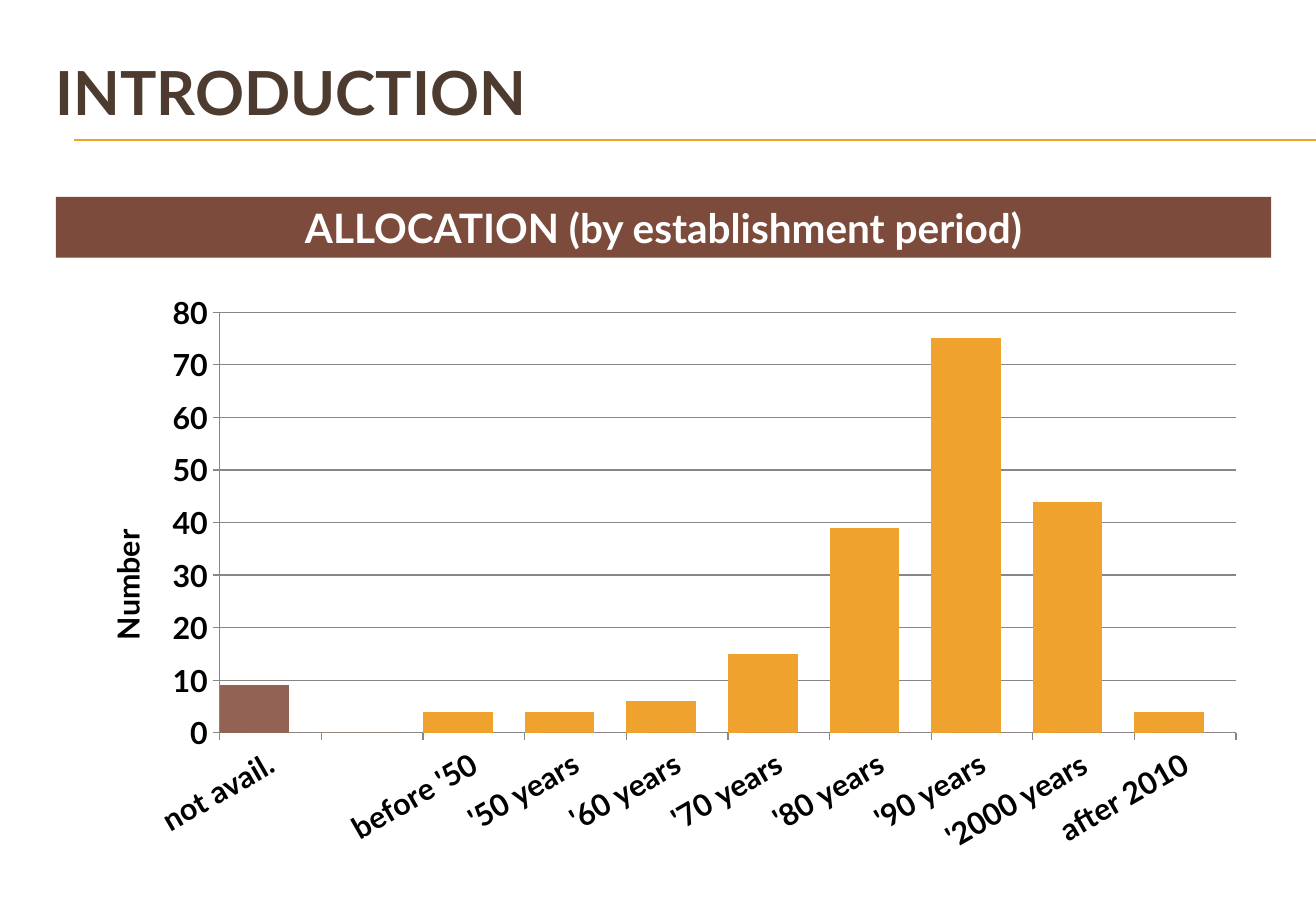
import dataclasses

import lxml.etree
import pptx
import pptx.chart.data
import pptx.dml.color
import pptx.enum.chart
import pptx.enum.shapes
import pptx.enum.text
import pptx.oxml
import pptx.oxml.ns
import pptx.util


@dataclasses.dataclass(frozen=True)
class Theme:
    """Colours, type sizes and line widths of the deck."""
    font: str = "Lato"
    heading: str = "4E3B30"
    accent: str = "F0A22E"
    banner: str = "7C4B3B"
    missing: str = "926255"
    series: tuple = ("F0A22E", "A5644E", "B58B80")
    axis: str = "878787"
    black: str = "000000"
    white: str = "FFFFFF"
    title_pt: int = 36
    banner_pt: int = 24
    chart_pt: int = 18
    line_pt: float = 0.75


THEME = Theme()
WIDTH, HEIGHT = pptx.util.Inches(10.83), pptx.util.Inches(7.5)
PERIODS = ("not avail.", "", "before '50", "'50 years", "'60 years",
           "'70 years", "'80 years", "'90 years", "'2000 years", "after 2010")
COUNTS = (9, 0, 4, 4, 6, 15, 39, 75, 44, 4)
ZEROS = (0, 0, None, 0, 0, 0, 0, 0, 0, 0)


def area(x, y, w, h):
    """Turn percentages of the slide into a box of lengths."""
    return tuple(round(share * side / 100) for share, side
                 in ((x, WIDTH), (y, HEIGHT), (w, WIDTH), (h, HEIGHT)))


def rgb(value):
    """Return a colour object for a hex value."""
    return pptx.dml.color.RGBColor.from_string(value)


def style_font(font, size, color, bold=True):
    """Apply the theme face with a size and colour."""
    font.name, font.size, font.bold = THEME.font, pptx.util.Pt(size), bold
    font.color.rgb = rgb(color)


def style_line(line, color):
    """Give a line its colour and the theme width."""
    line.color.rgb, line.width = rgb(color), pptx.util.Pt(THEME.line_pt)


def add_text(tf, text, size, color, align):
    """Write one bold run into a wrapped, vertically centred frame."""
    tf.word_wrap = True
    tf.vertical_anchor = pptx.enum.text.MSO_ANCHOR.MIDDLE
    p = tf.paragraphs[0]
    p.alignment = align
    r = p.add_run()
    r.text = text
    style_font(r.font, size, color)


def add_title(s, box, text):
    """Place the slide heading."""
    add_text(s.shapes.add_textbox(*box).text_frame, text, THEME.title_pt,
             THEME.heading, pptx.enum.text.PP_ALIGN.LEFT)


def add_rule(s, box):
    """Draw the pair of lines at the top and bottom of the box."""
    x, y, w, h = box
    for level in (y, y + h):
        line = s.shapes.add_connector(
            pptx.enum.shapes.MSO_CONNECTOR.STRAIGHT, x, level, x + w, level)
        style_line(line.line, THEME.accent)
        lxml.etree.SubElement(line._element.spPr,
                              pptx.oxml.ns.qn("a:effectLst"))


def add_banner(s, box, text):
    """Place the filled subtitle bar."""
    sp = s.shapes.add_shape(pptx.enum.shapes.MSO_SHAPE.RECTANGLE, *box)
    sp.shadow.inherit = False
    sp.fill.solid()
    sp.fill.fore_color.rgb = rgb(THEME.banner)
    sp.line.fill.background()
    add_text(sp.text_frame, text, THEME.banner_pt, THEME.white,
             pptx.enum.text.PP_ALIGN.CENTER)


def set_layout(parent, index, **shares):
    """Fix a chart part at shares of the chart area."""
    for old in parent.findall(pptx.oxml.ns.qn("c:layout")):
        parent.remove(old)
    layout = pptx.oxml.parse_xml(
        f"<c:layout {pptx.oxml.ns.nsdecls('c')}><c:manualLayout/></c:layout>")
    settings = {"xMode": "edge", "yMode": "edge", **shares}
    if "w" in shares:
        settings = {"layoutTarget": "inner", **settings}
    for name, value in settings.items():
        lxml.etree.SubElement(layout[0], pptx.oxml.ns.qn(f"c:{name}"),
                              val=str(value))
    parent.insert(index, layout)


def style_axis(axis):
    """Style the line, ticks and labels of an axis."""
    axis.major_tick_mark = pptx.enum.chart.XL_TICK_MARK.OUTSIDE
    axis.minor_tick_mark = pptx.enum.chart.XL_TICK_MARK.NONE
    style_line(axis.format.line, THEME.axis)
    style_font(axis.tick_labels.font, THEME.chart_pt, THEME.black)


def add_period_chart(s, box):
    """Place the column chart of counts by establishment period."""
    data = pptx.chart.data.CategoryChartData()
    data.categories = PERIODS
    for number, values in enumerate((COUNTS, ZEROS, ZEROS), 1):
        data.add_series(f"Series {number}", values)
    chart = s.shapes.add_chart(
        pptx.enum.chart.XL_CHART_TYPE.COLUMN_CLUSTERED, *box, data).chart
    chart.has_legend = chart.has_title = False
    style_font(chart.font, THEME.chart_pt, THEME.black, False)

    plot = chart.plots[0]
    plot.vary_by_categories, plot.gap_width, plot.overlap = False, 0, 77
    for series, color in zip(plot.series, THEME.series):
        series.invert_if_negative = False
        series.format.fill.solid()
        series.format.fill.fore_color.rgb = rgb(color)
    missing = plot.series[0].points[0].format.fill
    missing.solid()
    missing.fore_color.rgb = rgb(THEME.missing)

    style_axis(chart.category_axis)
    labels = chart.category_axis.tick_labels.font._element.getparent()
    body = labels.getparent().getparent().find(pptx.oxml.ns.qn("a:bodyPr"))
    body.set("rot", str(-30 * 60000))
    body.set("vert", "horz")

    axis = chart.value_axis
    style_axis(axis)
    axis.minimum_scale, axis.maximum_scale, axis.major_unit = 0, 80, 10
    style_line(axis.major_gridlines.format.line, THEME.axis)
    add_axis_title(axis, "Number ")
    plot_area = chart._chartSpace.xpath("c:chart/c:plotArea")[0]
    set_layout(plot_area, 0, x=0.13, y=0.05, w=0.85, h=0.72)


def add_axis_title(axis, text):
    """Set a vertical axis title at the left of the chart."""
    tf = axis.axis_title.text_frame
    r = tf.paragraphs[0].add_run()
    r.text = text
    style_font(r.font, THEME.chart_pt, THEME.black)
    body = tf._txBody.find(pptx.oxml.ns.qn("a:bodyPr"))
    body.set("rot", str(-90 * 60000))
    body.set("vert", "horz")
    set_layout(axis.axis_title._element, 1, x=0.03, y=0.4)


def build_chart_slide(prs):
    """Assemble the heading, banner and chart on a blank slide."""
    s = prs.slides.add_slide(prs.slide_layouts[6])
    add_rule(s, area(5.63, 15.33, 94.37, 0.13))
    add_title(s, area(3.32, 3.87, 95.01, 12.27), "INTRODUCTION")
    add_banner(s, area(4.25, 21.6, 92.34, 6.67),
               "ALLOCATION (by establishment period)")
    add_period_chart(s, area(4.89, 31.07, 90.86, 64.13))


def main():
    """Create and save the presentation."""
    prs = pptx.Presentation()
    prs.slide_width, prs.slide_height = WIDTH, HEIGHT
    build_chart_slide(prs)
    prs.save("out.pptx")


if __name__ == "__main__":
    main()
